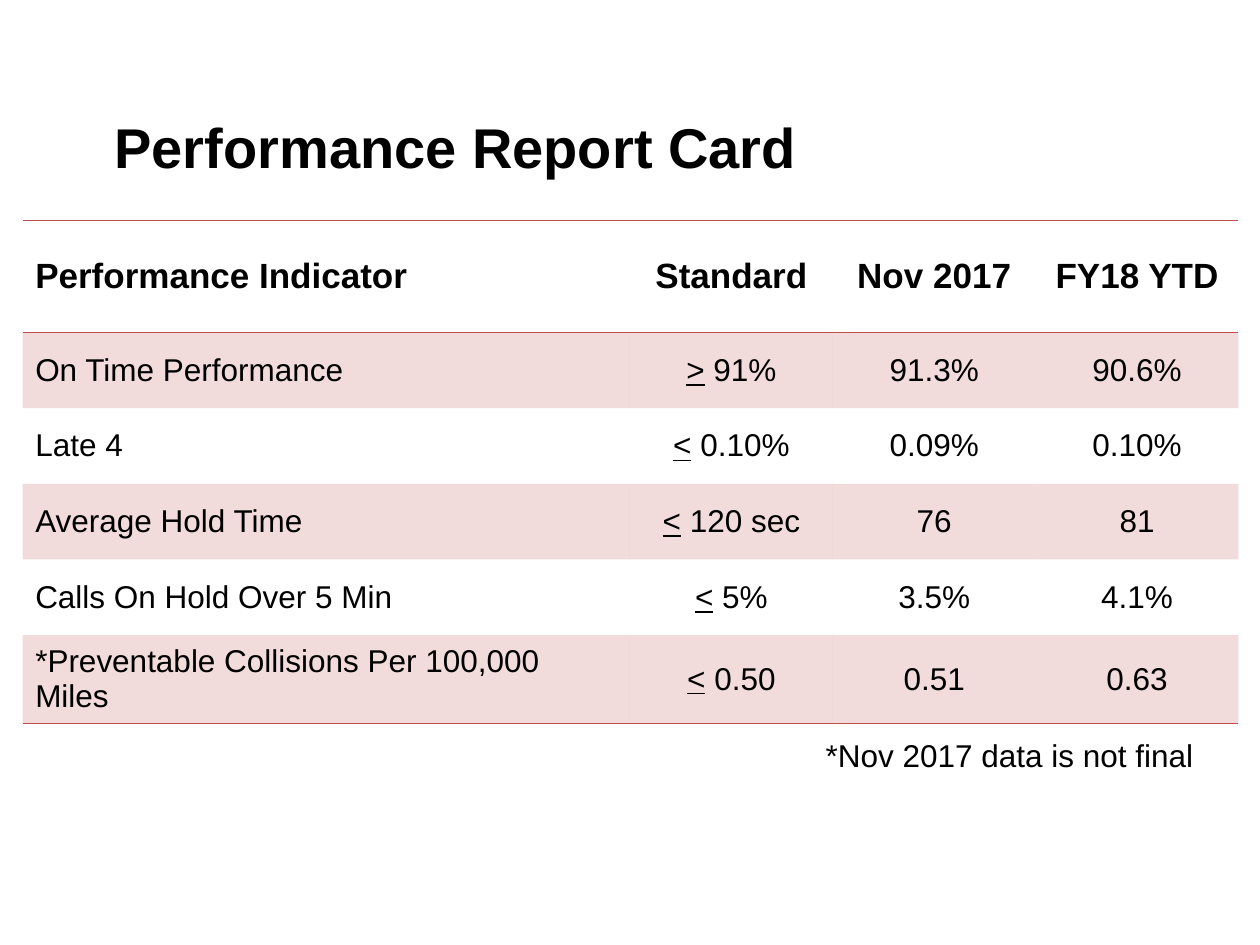
from lxml import etree
from pptx import Presentation
from pptx.dml.color import RGBColor
from pptx.enum.text import MSO_ANCHOR, PP_ALIGN
from pptx.oxml.ns import qn
from pptx.util import Inches, Pt

LEFT, CENTER, RIGHT = PP_ALIGN.LEFT, PP_ALIGN.CENTER, PP_ALIGN.RIGHT
TOP, MIDDLE = MSO_ANCHOR.TOP, MSO_ANCHOR.MIDDLE
BLACK = RGBColor(0x00, 0x00, 0x00)
RED = RGBColor(0xC0, 0x50, 0x4D)
FONT = "Arial"
PLAIN_TABLE_STYLE = "{2D5ABB26-0587-4C30-8999-92F81FD0307C}"
BAND_OPACITY = 20

COLUMN_WIDTHS = [4.82, 1.61, 1.61, 1.61]
ROW_HEIGHTS = [0.89, 0.6, 0.6, 0.6, 0.6, 0.63]
REPORT_ROWS = [
    ["Performance Indicator", "Standard", "Nov 2017", "FY18 YTD"],
    ["On Time Performance", "> 91%", "91.3%", "90.6%"],
    ["Late 4", "< 0.10%", "0.09%", "0.10%"],
    ["Average Hold Time", "< 120 sec", "76", "81"],
    ["Calls On Hold Over 5 Min", "< 5%", "3.5%", "4.1%"],
    ["*Preventable Collisions Per 100,000 Miles", "< 0.50", "0.51", "0.63"],
]


def write_text(frame, text, size=18, bold=False, align=LEFT):
    """Write one paragraph, underlining a leading comparison sign."""
    para = frame.paragraphs[0]
    para.alignment = align
    sign_length = 1 if text[0] in "<>" else 0
    for part, underline in ((text[:sign_length], True), (text[sign_length:], False)):
        if part:
            span = para.add_run()
            span.text = part
            span.font.name = FONT
            span.font.size = Pt(size)
            span.font.bold = bold
            span.font.underline = underline
            span.font.color.rgb = BLACK


def add_text_box(page, text, left, top, width, height, anchor=TOP, **text_format):
    """Add a wrapping text box with one formatted paragraph."""
    box = page.shapes.add_textbox(Inches(left), Inches(top), Inches(width), Inches(height))
    box.text_frame.word_wrap = True
    box.text_frame.vertical_anchor = anchor
    write_text(box.text_frame, text, **text_format)


def add_border(cell, side):
    """Draw a red one-point line on one side of a cell."""
    line = etree.SubElement(cell._tc.get_or_add_tcPr(), qn(f"a:{side}"), w=str(Pt(1)))
    fill = etree.SubElement(line, qn("a:solidFill"))
    etree.SubElement(fill, qn("a:srgbClr"), val=str(RED))


def fill_band(cell):
    """Fill a cell with translucent red."""
    cell.fill.solid()
    cell.fill.fore_color.rgb = RED
    color = cell._tc.tcPr.find(qn("a:solidFill")).find(qn("a:srgbClr"))
    etree.SubElement(color, qn("a:alpha"), val=str(BAND_OPACITY * 1000))


def format_cell(cell, text, row, column):
    """Fill one report cell according to its place in the table."""
    header = row == 0
    cell.vertical_anchor = MIDDLE
    write_text(cell.text_frame, text, size=20 if header else 18, bold=header,
               align=CENTER if column else LEFT)
    if header:
        add_border(cell, "lnT")
    if row in (0, len(REPORT_ROWS) - 1):
        add_border(cell, "lnB")
    if row % 2:
        fill_band(cell)
    else:
        cell.fill.background()


def add_report_table(page, left, top):
    """Add the performance table with banded rows."""
    table = page.shapes.add_table(
        len(ROW_HEIGHTS), len(COLUMN_WIDTHS), Inches(left), Inches(top),
        Inches(sum(COLUMN_WIDTHS)), Inches(sum(ROW_HEIGHTS))).table
    table.first_row = table.horz_banding = False
    table._tbl.tblPr.find(qn("a:tableStyleId")).text = PLAIN_TABLE_STYLE
    for column, width in zip(table.columns, COLUMN_WIDTHS):
        column.width = Inches(width)
    for row, height in zip(table.rows, ROW_HEIGHTS):
        row.height = Inches(height)
    for row, texts in enumerate(REPORT_ROWS):
        for column, text in enumerate(texts):
            format_cell(table.cell(row, column), text, row, column)


def main():
    """Build the report card slide."""
    deck = Presentation()
    deck.slide_width, deck.slide_height = Inches(10), Inches(7.5)
    page = deck.slides.add_slide(deck.slide_layouts[6])
    add_text_box(page, "Performance Report Card", 0.81, 0.84, 8.39, 0.64,
                 anchor=MIDDLE, size=32, bold=True)
    add_report_table(page, 0.18, 1.75)
    add_text_box(page, "*Nov 2017 data is not final", 3.94, 5.79, 5.63, 0.4, align=RIGHT)
    deck.save("out.pptx")


if __name__ == "__main__":
    main()
